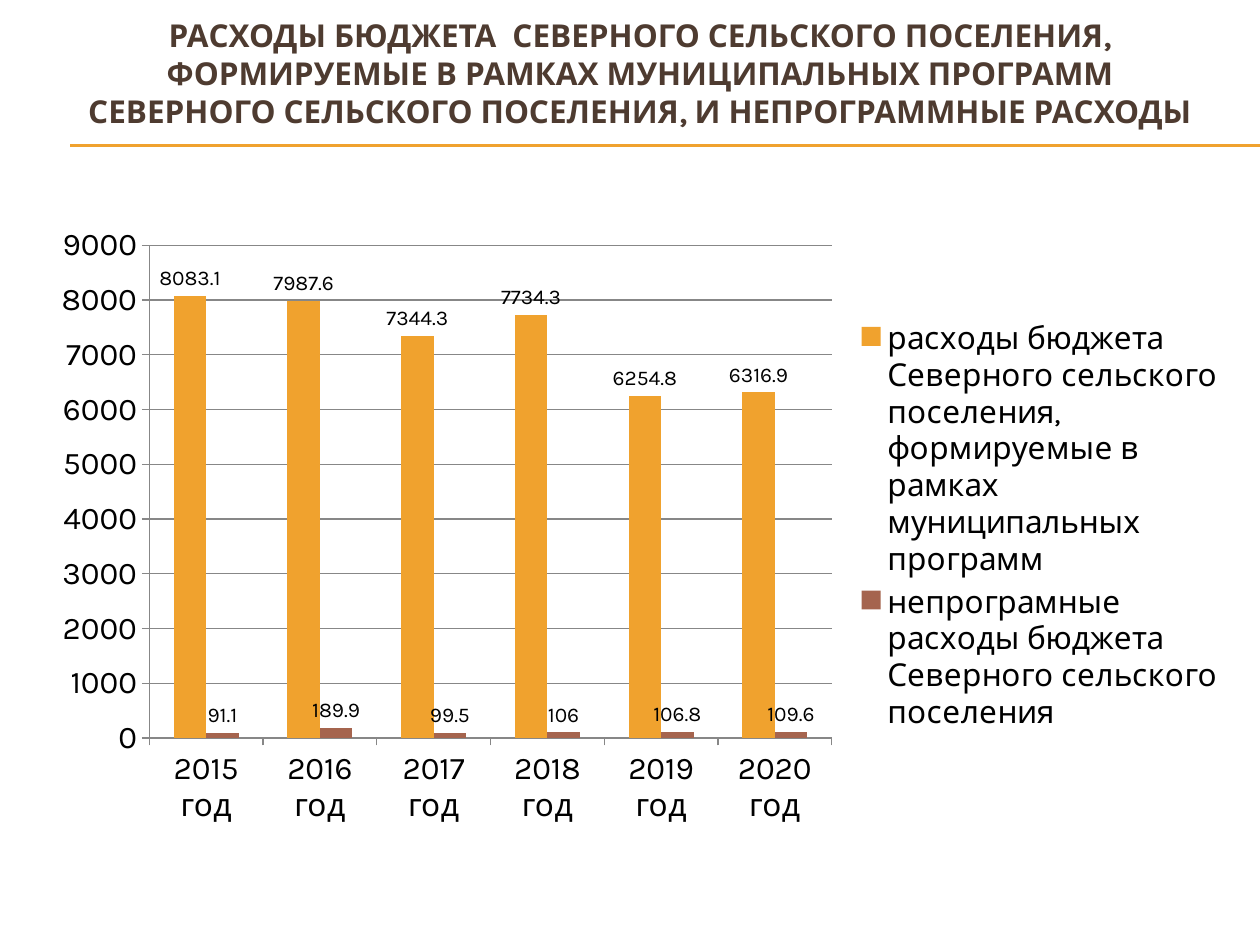
from lxml.etree import SubElement
from pptx import Presentation
from pptx.chart.data import CategoryChartData
from pptx.dml.color import RGBColor
from pptx.enum.chart import XL_CHART_TYPE as ChartType
from pptx.enum.chart import XL_LABEL_POSITION as LabelPosition
from pptx.enum.chart import XL_LEGEND_POSITION as LegendPosition
from pptx.enum.chart import XL_TICK_MARK as TickMark
from pptx.enum.shapes import MSO_CONNECTOR as Connector
from pptx.enum.text import MSO_ANCHOR as Anchor
from pptx.enum.text import PP_ALIGN as Align
from pptx.oxml.ns import qn
from pptx.util import Pt

ORANGE = RGBColor(0xF0, 0xA2, 0x2E)
RUST = RGBColor(0xA5, 0x64, 0x4E)
BROWN = RGBColor(0x4E, 0x3B, 0x30)
BLACK = RGBColor(0, 0, 0)
GRAY = RGBColor(0x87, 0x87, 0x87)
FONT = "Karla"

TITLE = [
    "РАСХОДЫ БЮДЖЕТА  СЕВЕРНОГО СЕЛЬСКОГО ПОСЕЛЕНИЯ,",
    "ФОРМИРУЕМЫЕ В РАМКАХ МУНИЦИПАЛЬНЫХ ПРОГРАММ",
    "СЕВЕРНОГО СЕЛЬСКОГО ПОСЕЛЕНИЯ, И НЕПРОГРАММНЫЕ РАСХОДЫ",
]
YEARS = range(2015, 2021)
SERIES = [
    ("расходы бюджета Северного сельского поселения, формируемые в рамках муниципальных программ",
     [8083.1, 7987.6, 7344.3, 7734.3, 6254.8, 6316.9], ORANGE),
    ("непрограмные расходы бюджета Северного сельского поселения",
     [91.1, 189.9, 99.5, 106, 106.8, 109.6], RUST),
]
RULE_LEFT, RULE_RIGHT = 40.3, 720
RULE_TOPS = [82.8, 83.5]
TITLE_BOX = (23.8, 20.9, 684, 62.6)
CHART_BOX = (23.8, 122.4, 684, 356.4)
PLOT_AREA = {"x": 0.09, "y": 0.05, "w": 0.57, "h": 0.79}


def set_all(target, values):
    for name, value in values.items():
        setattr(target, name, value)


def style_font(font, size, color, bold=False):
    set_all(font, {"name": FONT, "size": Pt(size), "bold": bold})
    font.color.rgb = color


def style_line(line, color):
    line.color.rgb = color
    line.width = Pt(0.75)


def add_rule(page, top):
    rule = page.shapes.add_connector(
        Connector.STRAIGHT, Pt(RULE_LEFT), Pt(top), Pt(RULE_RIGHT), Pt(top))
    style_line(rule.line, ORANGE)
    SubElement(rule._element.spPr, qn("a:effectLst"))


def add_title(page):
    box = page.shapes.add_textbox(*map(Pt, TITLE_BOX))
    frame = box.text_frame
    set_all(frame, {"word_wrap": True, "vertical_anchor": Anchor.MIDDLE,
                    "margin_top": 0, "margin_bottom": Pt(21)})
    para = frame.paragraphs[0]
    para.alignment = Align.CENTER
    for index, line in enumerate(TITLE):
        if index:
            para.add_line_break()
        span = para.add_run()
        span.text = line
        style_font(span.font, 18, BROWN, True)


def place_plot(chart):
    plot_area = chart._chartSpace.chart.plotArea
    layout = plot_area.find(qn("c:layout"))
    if layout is None:
        layout = SubElement(plot_area, qn("c:layout"))
        plot_area.insert(0, layout)
    manual = SubElement(layout, qn("c:manualLayout"))
    settings = {"layoutTarget": "inner", "xMode": "edge", "yMode": "edge", **PLOT_AREA}
    for name, value in settings.items():
        SubElement(manual, qn(f"c:{name}")).set("val", str(value))


def add_budget_chart(page):
    data = CategoryChartData()
    data.categories = [f"{year} год" for year in YEARS]
    for name, values, _ in SERIES:
        data.add_series(name, values)
    chart = page.shapes.add_chart(
        ChartType.COLUMN_CLUSTERED, *map(Pt, CHART_BOX), data).chart
    style_font(chart.font, 18, BLACK)
    set_all(chart, {"has_title": False, "has_legend": True})
    set_all(chart.legend, {"position": LegendPosition.RIGHT, "include_in_layout": False})
    style_font(chart.legend.font, 18, BLACK)

    for axis in (chart.category_axis, chart.value_axis):
        set_all(axis, {"major_tick_mark": TickMark.OUTSIDE, "minor_tick_mark": TickMark.NONE})
        style_line(axis.format.line, GRAY)
    set_all(chart.value_axis, {"minimum_scale": 0, "maximum_scale": 9000,
                               "major_unit": 1000, "has_major_gridlines": True})
    style_line(chart.value_axis.major_gridlines.format.line, GRAY)

    plot = chart.plots[0]
    set_all(plot, {"gap_width": 150, "overlap": 0, "vary_by_categories": False})
    for series, (_, _, color) in zip(plot.series, SERIES):
        series.format.fill.solid()
        series.format.fill.fore_color.rgb = color
        labels = series.data_labels
        set_all(labels, {"show_value": True, "position": LabelPosition.OUTSIDE_END})
        style_font(labels.font, 12, BLACK)
    place_plot(chart)


def main():
    deck = Presentation()
    set_all(deck, {"slide_width": Pt(720), "slide_height": Pt(540)})
    page = deck.slides.add_slide(deck.slide_layouts[6])
    for top in RULE_TOPS:
        add_rule(page, top)
    add_title(page)
    add_budget_chart(page)
    deck.save("out.pptx")


if __name__ == "__main__":
    main()
